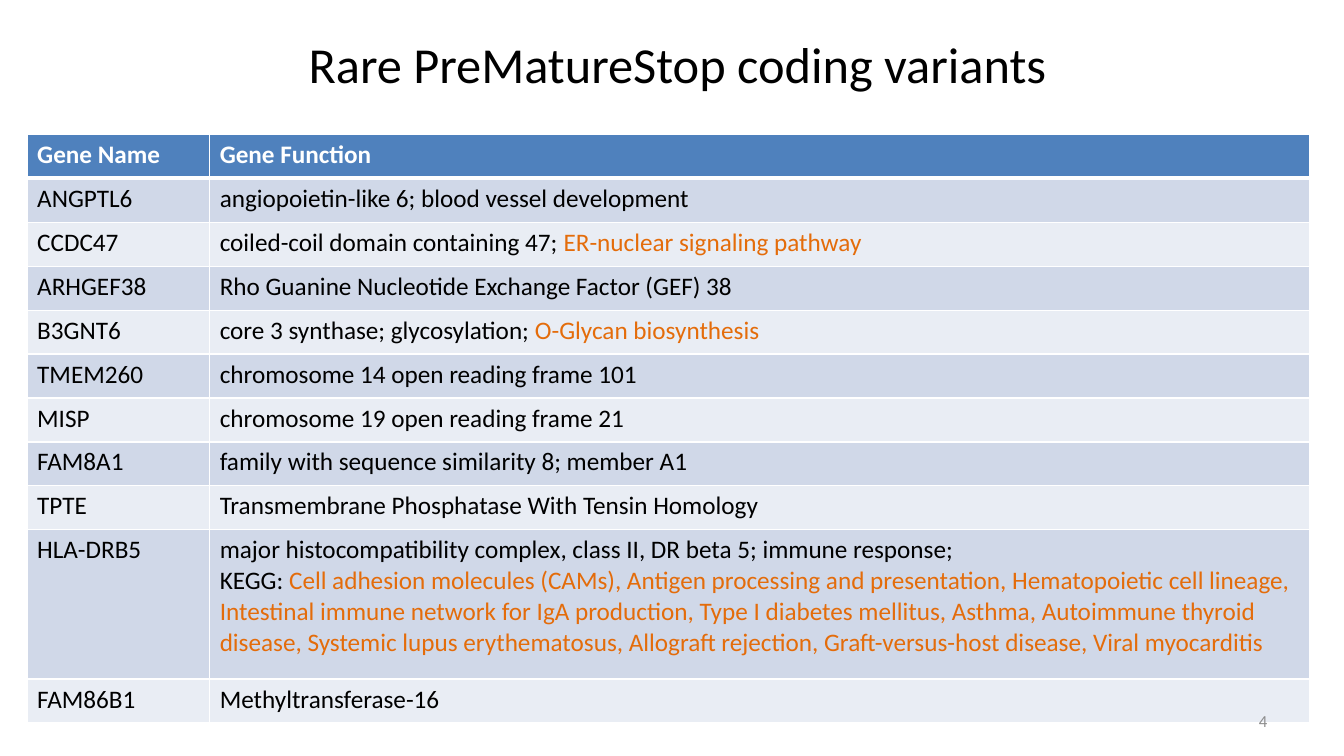
from dataclasses import dataclass

import pptx
import pptx.dml.color
import pptx.enum.text
import pptx.oxml
import pptx.oxml.ns
import pptx.presentation
import pptx.slide
import pptx.table
import pptx.text.text
import pptx.util

Pt = pptx.util.Pt
Align = pptx.enum.text.PP_ALIGN


@dataclass(frozen=True)
class Theme:
    font: str = "Calibri"
    title_size: float = 36
    table_size: float = 18
    number_size: float = 12
    text: str = "000000"
    header_text: str = "FFFFFF"
    pathway: str = "E46C0A"
    number: str = "8C8C8C"
    header_fill: str = "4F81BD"
    band_fills: tuple[str, str] = ("D0D8E8", "E9EDF4")
    border: str = "FFFFFF"
    border_width: float = 1
    header_rule: float = 3


@dataclass(frozen=True)
class Line:
    plain: str
    pathway: str = ""


@dataclass(frozen=True)
class Gene:
    name: str
    function: tuple[Line, ...]
    height: float = 31.4


@dataclass(frozen=True)
class Label:
    text: str
    left: float
    top: float
    width: float
    height: float
    size: float
    color: str
    align: Align


THEME = Theme()
COLUMN_WIDTHS = (130.4, 785.5)
TABLE_LEFT, TABLE_TOP = 19.4, 96

LABELS = (
    Label(" Rare PreMatureStop coding variants", 48, 0, 864, 90,
          THEME.title_size, THEME.text, Align.CENTER),
    Label("4", 688.3, 500.4, 224, 28.8,
          THEME.number_size, THEME.number, Align.RIGHT),
)

HEADER = Gene("Gene Name", (Line("Gene Function"),))
GENES = (
    Gene("ANGPTL6", (Line("angiopoietin-like 6; blood vessel development"),)),
    Gene("CCDC47", (Line("coiled-coil domain containing 47; ", "ER-nuclear signaling pathway"),)),
    Gene("ARHGEF38", (Line("Rho Guanine Nucleotide Exchange Factor (GEF) 38"),)),
    Gene("B3GNT6", (Line("core 3 synthase; glycosylation; ", "O-Glycan biosynthesis"),)),
    Gene("TMEM260", (Line("chromosome 14 open reading frame 101"),)),
    Gene("MISP", (Line("chromosome 19 open reading frame 21"),)),
    Gene("FAM8A1", (Line("family with sequence similarity 8; member A1"),)),
    Gene("TPTE", (Line("Transmembrane Phosphatase With Tensin Homology"),)),
    Gene("HLA-DRB5", (
        Line("major histocompatibility complex, class II, DR beta 5; immune response;"),
        Line("KEGG: ",
             "Cell adhesion molecules (CAMs), Antigen processing and presentation, "
             "Hematopoietic cell lineage, Intestinal immune network for IgA production, "
             "Type I diabetes mellitus, Asthma, Autoimmune thyroid disease, "
             "Systemic lupus erythematosus, Allograft rejection, "
             "Graft-versus-host disease, Viral myocarditis"),
    ), 106.6),
    Gene("FAM86B1", (Line("Methyltransferase-16"),)),
)


def rgb(color: str) -> pptx.dml.color.RGBColor:
    return pptx.dml.color.RGBColor.from_string(color)


def set_font(font: pptx.text.text.Font, size: float, color: str, bold: bool = False) -> None:
    font.name = THEME.font
    font.size = Pt(size)
    font.bold = bold
    font.color.rgb = rgb(color)


def draw_label(slide: pptx.slide.Slide, label: Label) -> None:
    frame = slide.shapes.add_textbox(
        Pt(label.left), Pt(label.top), Pt(label.width), Pt(label.height)).text_frame
    frame.word_wrap = True
    frame.vertical_anchor = pptx.enum.text.MSO_ANCHOR.MIDDLE
    paragraph = frame.paragraphs[0]
    paragraph.text = label.text
    paragraph.alignment = label.align
    set_font(paragraph.font, label.size, label.color)


def set_borders(cell: pptx.table._Cell, top: float, bottom: float) -> None:
    side = THEME.border_width
    properties = cell._tc.get_or_add_tcPr()
    widths = {"lnL": side, "lnR": side, "lnT": top, "lnB": bottom}
    for position, (edge, width) in enumerate(widths.items()):
        properties.insert(position, pptx.oxml.parse_xml(
            f'<a:{edge} {pptx.oxml.ns.nsdecls("a")} w="{Pt(width)}"><a:solidFill>'
            f'<a:srgbClr val="{THEME.border}"/></a:solidFill></a:{edge}>'))


def fill_cell(cell: pptx.table._Cell, lines: tuple[Line, ...], row: int) -> None:
    is_header = row == 0
    cell.fill.solid()
    cell.fill.fore_color.rgb = rgb(
        THEME.header_fill if is_header else THEME.band_fills[(row - 1) % 2])
    set_borders(cell,
                THEME.header_rule if row == 1 else THEME.border_width,
                THEME.header_rule if is_header else THEME.border_width)
    color = THEME.header_text if is_header else THEME.text
    frame = cell.text_frame
    for index, line in enumerate(lines):
        paragraph = frame.add_paragraph() if index else frame.paragraphs[0]
        set_font(paragraph.font, THEME.table_size, color, is_header)
        paragraph.add_run().text = line.plain
        if line.pathway:
            pathway = paragraph.add_run()
            pathway.text = line.pathway
            pathway.font.color.rgb = rgb(THEME.pathway)


def draw_genes(slide: pptx.slide.Slide) -> None:
    rows = (HEADER, *GENES)
    table = slide.shapes.add_table(
        len(rows), len(COLUMN_WIDTHS), Pt(TABLE_LEFT), Pt(TABLE_TOP),
        Pt(sum(COLUMN_WIDTHS)), Pt(sum(gene.height for gene in rows))).table
    for column, width in zip(table.columns, COLUMN_WIDTHS):
        column.width = Pt(width)
    for row, gene in enumerate(rows):
        table.rows[row].height = Pt(gene.height)
        fill_cell(table.cell(row, 0), (Line(gene.name),), row)
        fill_cell(table.cell(row, 1), gene.function, row)


def main() -> None:
    deck = pptx.Presentation()
    deck.slide_width, deck.slide_height = Pt(960), Pt(540)
    slide = deck.slides.add_slide(deck.slide_layouts[6])
    title, page_number = LABELS
    draw_label(slide, title)
    draw_genes(slide)
    draw_label(slide, page_number)
    deck.save("out.pptx")


if __name__ == "__main__":
    main()
